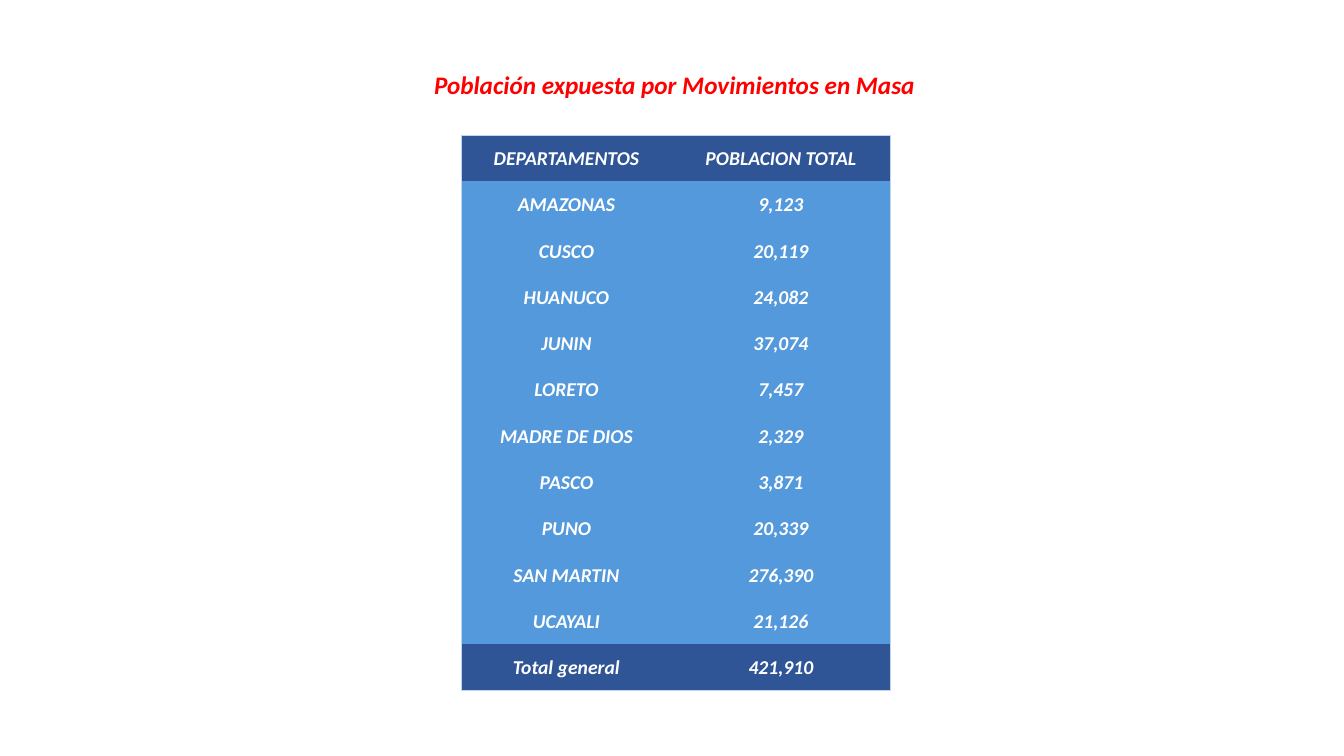
import pptx
import pptx.util
import pptx.dml.color
import pptx.enum.text
import pptx.oxml
import pptx.oxml.ns

RGB = pptx.dml.color.RGBColor
RED = RGB(0xFF, 0x00, 0x00)
WHITE = RGB(0xFF, 0xFF, 0xFF)
NAVY = RGB(0x2F, 0x55, 0x97)
BLUE = RGB(0x53, 0x99, 0xDB)
EDGE = RGB(0xC4, 0xD5, 0xEB)

TITLE = "Población expuesta por Movimientos en Masa"
ROWS = [
    ("DEPARTAMENTOS", "POBLACION TOTAL"),
    ("AMAZONAS", "9,123"),
    ("CUSCO", "20,119"),
    ("HUANUCO", "24,082"),
    ("JUNIN", "37,074"),
    ("LORETO", "7,457"),
    ("MADRE DE DIOS", "2,329"),
    ("PASCO", "3,871"),
    ("PUNO", "20,339"),
    ("SAN MARTIN", "276,390"),
    ("UCAYALI", "21,126"),
    ("Total general", "421,910"),
]

SIZE = (1344, 756)
TITLE_BOX = (421, 64, 507, 40)
LEFT, TOP, HEIGHT = 461, 135, 556
WIDTHS = (211, 218)
FONT = "Calibri"


def px(n):
    return pptx.util.Emu(round(n * 914400 / 100.8))


def style(frame, size, color):
    """Center the text and make it bold italic."""
    para = frame.paragraphs[0]
    para.alignment = pptx.enum.text.PP_ALIGN.CENTER
    font = para.runs[0].font
    font.name, font.size = FONT, pptx.util.Pt(size)
    font.bold = font.italic = True
    font.color.rgb = color


def border(cell, sides):
    """Draw the given sides (of L, R, T, B) and clear the others."""
    props = cell._tc.get_or_add_tcPr()
    for i, side in enumerate("LRTB"):
        if side in sides:
            paint = f'<a:solidFill><a:srgbClr val="{EDGE}"/></a:solidFill>'
        else:
            paint = "<a:noFill/>"
        xml = f'<a:ln{side} {pptx.oxml.ns.nsdecls("a")} w="6350">{paint}</a:ln{side}>'
        props.insert(i, pptx.oxml.parse_xml(xml))


def add_title(slide):
    frame = slide.shapes.add_textbox(*map(px, TITLE_BOX)).text_frame
    frame.word_wrap = False
    frame.auto_size = pptx.enum.text.MSO_AUTO_SIZE.SHAPE_TO_FIT_TEXT
    frame.text = TITLE
    style(frame, 18, RED)


def add_grid(slide):
    table = slide.shapes.add_table(
        len(ROWS), len(WIDTHS), px(LEFT), px(TOP), px(sum(WIDTHS)), px(HEIGHT)
    ).table
    for col, width in zip(table.columns, WIDTHS):
        col.width = px(width)
    last = len(ROWS) - 1
    for r, row in enumerate(ROWS):
        table.rows[r].height = px(HEIGHT / len(ROWS))
        for c, text in enumerate(row):
            cell = table.cell(r, c)
            cell.text_frame.text = text
            style(cell.text_frame, 14, WHITE)
            cell.vertical_anchor = pptx.enum.text.MSO_ANCHOR.MIDDLE
            cell.margin_left = cell.margin_right = cell.margin_top = px(1)
            cell.margin_bottom = 0
            cell.fill.solid()
            cell.fill.fore_color.rgb = NAVY if r in (0, last) else BLUE
            sides = "LR"[c] + "T" * (r == 0) + "B" * (r == last)
            border(cell, sides)


def main():
    deck = pptx.Presentation()
    deck.slide_width, deck.slide_height = map(px, SIZE)
    slide = deck.slides.add_slide(deck.slide_layouts[6])
    add_title(slide)
    add_grid(slide)
    deck.save("out.pptx")


if __name__ == "__main__":
    main()
